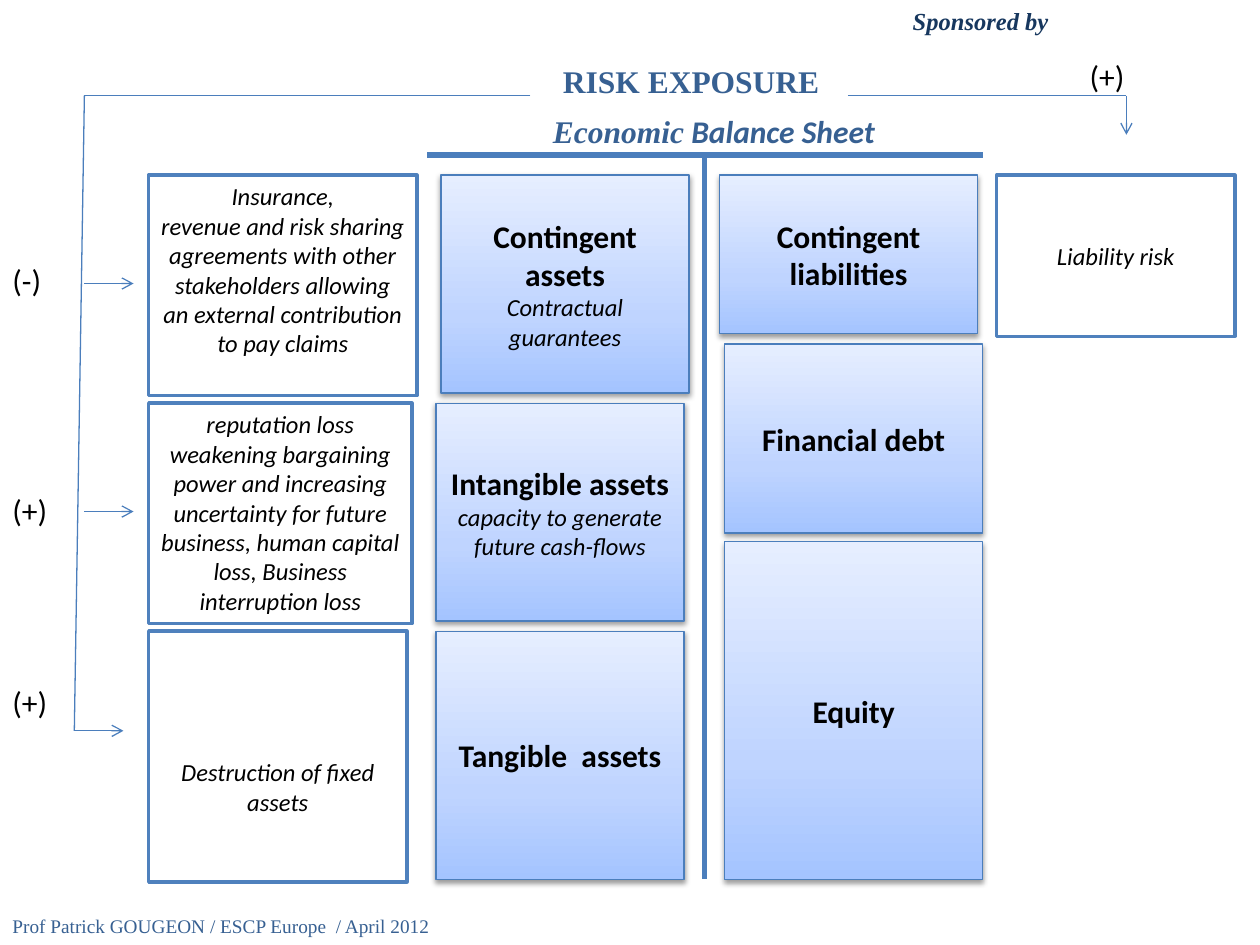
from lxml import etree
from pptx import Presentation, util as u
from pptx.dml.color import RGBColor
from pptx.enum import shapes, text
from pptx.oxml.ns import qn

# The slide is a grid of 100 columns and 75 rows.
WIDTH, HEIGHT = u.Inches(10), u.Inches(7.5)
COLUMN, ROW = WIDTH / 100, HEIGHT / 75

BLACK = RGBColor(0x00, 0x00, 0x00)
WHITE = RGBColor(0xFF, 0xFF, 0xFF)
NAVY = RGBColor(0x17, 0x37, 0x5E)
STEEL = RGBColor(0x37, 0x60, 0x92)
LINE_BLUE = RGBColor(0x4B, 0x7E, 0xBC)
BORDER_BLUE = RGBColor(0x4F, 0x81, 0xBD)
GRADIENT = [
    (0, RGBColor(0xA4, 0xC4, 0xFF)),
    (35, RGBColor(0xBF, 0xD4, 0xFF)),
    (100, RGBColor(0xE6, 0xEE, 0xFF)),
]

SERIF, SANS = "Times New Roman", "Calibri"
ITEM = dict(name=SANS, size=u.Pt(18), bold=True, color=BLACK)
DETAIL = dict(name=SANS, size=u.Pt(14), italic=True, color=BLACK)
SIGN = dict(name=SANS, size=u.Pt(18), color=BLACK)
TITLE = dict(name=SERIF, size=u.Pt(18), bold=True, color=STEEL)
SUBTITLE = TITLE | dict(italic=True)
FOOTER = dict(name=SERIF, size=u.Pt(11), color=STEEL)
SPONSOR = dict(name=SERIF, size=u.Pt(14), bold=True, italic=True, color=NAVY)

CENTER, RIGHT = text.PP_ALIGN.CENTER, text.PP_ALIGN.RIGHT


def place(left, top, width, height):
    """Turn grid columns and rows into slide lengths."""
    return [round(n) for n in (left * COLUMN, top * ROW, width * COLUMN, height * ROW)]


def write(frame, paragraphs, align=None, gaps=()):
    """Fill a frame; each paragraph is a list of (words, format) runs."""
    for index, runs in enumerate(paragraphs):
        paragraph = frame.add_paragraph() if index else frame.paragraphs[0]
        paragraph.alignment = align
        if index and gaps:
            paragraph.space_before = u.Pt(gaps[index - 1])
        for words, style in runs:
            run = paragraph.add_run()
            run.text = words
            for key, value in style.items():
                if key == "color":
                    run.font.color.rgb = value
                else:
                    setattr(run.font, key, value)


def add_label(slide, box, paragraphs, align=None, gaps=()):
    frame = slide.shapes.add_textbox(*place(*box)).text_frame
    frame.word_wrap = False
    frame.auto_size = text.MSO_AUTO_SIZE.SHAPE_TO_FIT_TEXT
    write(frame, paragraphs, align, gaps)


def add_box(slide, box, paragraphs, border, weight, anchor):
    shape = slide.shapes.add_shape(shapes.MSO_SHAPE.RECTANGLE, *place(*box))
    shape.shadow.inherit = False
    shape.line.color.rgb = border
    shape.line.width = u.Pt(weight)
    shape.text_frame.word_wrap = True
    shape.text_frame.vertical_anchor = anchor
    write(shape.text_frame, paragraphs, CENTER)
    return shape


def add_balance_box(slide, box, title, detail=None):
    """A shaded, shadowed balance sheet item."""
    paragraphs = [[(title, ITEM)]] + ([[(detail, DETAIL)]] if detail else [])
    shape = add_box(slide, box, paragraphs, LINE_BLUE, 0.75, text.MSO_ANCHOR.MIDDLE)
    shape.fill.gradient()
    shape.fill.gradient_angle = 90
    properties = shape._element.spPr
    stops = properties.find(".//" + qn("a:gsLst"))
    for stop in list(stops):
        stops.remove(stop)
    for percent, color in GRADIENT:
        stop = etree.SubElement(stops, qn("a:gs"), pos=str(percent * 1000))
        etree.SubElement(stop, qn("a:srgbClr"), val=str(color))
    shadow = etree.SubElement(
        properties.find(qn("a:effectLst")), qn("a:outerShdw"),
        blurRad=str(u.Pt(3.1)), dist=str(u.Pt(1.6)), dir="5400000", rotWithShape="0")
    color = etree.SubElement(shadow, qn("a:srgbClr"), val=str(BLACK))
    etree.SubElement(color, qn("a:alpha"), val="38000")


def add_risk_box(slide, box, lines, rows_above=0.5):
    """A white box whose text starts rows_above below its top edge."""
    paragraphs = [[(line, DETAIL)] for line in lines]
    shape = add_box(slide, box, paragraphs, BORDER_BLUE, 2, text.MSO_ANCHOR.TOP)
    shape.fill.solid()
    shape.fill.fore_color.rgb = WHITE
    shape.text_frame.margin_top = round(rows_above * ROW)


def add_line(slide, start, end, weight=0.75, arrow=False):
    connector = slide.shapes.add_connector(
        shapes.MSO_CONNECTOR.STRAIGHT, *place(*start, *end))
    connector.line.color.rgb = LINE_BLUE
    connector.line.width = u.Pt(weight)
    if arrow:
        etree.SubElement(connector.line._get_or_add_ln(), qn("a:tailEnd"), type="arrow")
    etree.SubElement(connector._element.spPr, qn("a:effectLst"))


def add_balance_sheet(slide):
    add_line(slide, (33.9, 12.3), (78, 12.3), weight=3)
    add_line(slide, (55.9, 12.3), (55.9, 69.8), weight=3)
    for box, *words in [
        ((34.6, 50.1, 19.7, 19.7), "Tangible  assets"),
        ((34.6, 32, 19.7, 17.3), "Intangible assets", "capacity to generate future cash-flows"),
        ((35, 13.9, 19.7, 17.3), "Contingent assets", "Contractual guarantees"),
        ((57.1, 13.9, 20.5, 12.6), "Contingent liabilities"),
        ((57.5, 27.3, 20.5, 15), "Financial debt"),
        ((57.5, 43, 20.5, 26.8), "Equity"),
    ]:
        add_balance_box(slide, box, *words)


def add_risks(slide):
    add_risk_box(slide, (11.8, 13.9, 21.3, 17.5), [
        "Insurance,",
        "revenue and risk sharing agreements with other stakeholders "
        "allowing an external contribution to pay claims"])
    add_risk_box(slide, (79.1, 13.9, 18.9, 12.8), ["Liability risk"], rows_above=5.2)
    add_risk_box(slide, (11.8, 32, 20.9, 17.5), [
        "reputation loss weakening bargaining power and increasing uncertainty "
        "for future business, human capital loss, Business interruption loss"])
    add_risk_box(slide, (11.8, 50.1, 20.5, 19.9), ["Destruction of fixed assets"], rows_above=10)


def add_exposure_lines(slide):
    top, trunk, foot, right = 7.6, 6.7, 5.9, 89.4
    add_line(slide, (42.1, top), (trunk, top))
    add_line(slide, (trunk, top), (foot, 58))
    for left, row in [(trunk, 22.5), (trunk, 40.6), (foot, 58)]:
        add_line(slide, (left, row), (left + 3.9, row), arrow=True)
    add_line(slide, (67.3, top), (right, top))
    add_line(slide, (right, top), (right, 10.7), arrow=True)


def add_labels(slide):
    add_label(slide, (0, 72.1, 35.5, 2.9),
              [[("Prof Patrick GOUGEON / ESCP Europe  / April 2012", FOOTER)]])
    add_label(slide, (71.3, 0, 12.9, 3.4), [[("Sponsored by", SPONSOR)]], RIGHT)
    add_label(slide, (43.7, 4.4, 22.6, 4), [[("RISK EXPOSURE", TITLE)]])
    add_label(slide, (42.9, 8.4, 27.9, 4),
              [[("Economic", SUBTITLE), (" Balance Sheet", SUBTITLE | dict(name=SANS))]])
    add_label(slide, (0, 20.2, 4.8, 37.4),
              [[(sign, SIGN)] for sign in ("(-)", "(+)", "(+)")], gaps=(110, 88))
    add_label(slide, (85.5, 4, 4.8, 4), [[("(+)", SIGN)]])


def main():
    presentation = Presentation()
    presentation.slide_width, presentation.slide_height = WIDTH, HEIGHT
    slide = presentation.slides.add_slide(presentation.slide_layouts[6])
    add_balance_sheet(slide)
    add_risks(slide)
    add_exposure_lines(slide)
    add_labels(slide)
    presentation.save("out.pptx")


if __name__ == "__main__":
    main()
